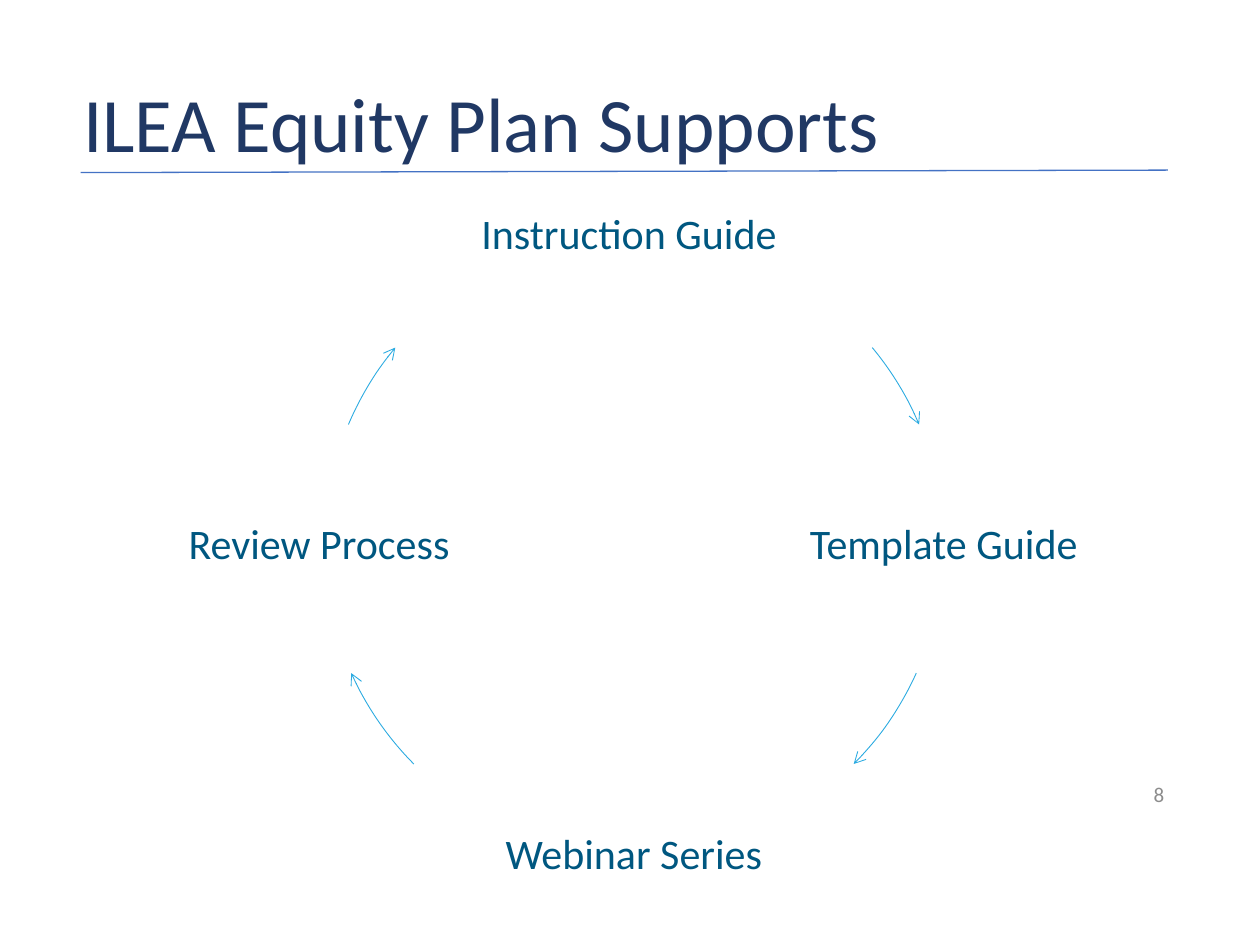
from dataclasses import dataclass
from math import cos, radians, sin

from lxml.etree import SubElement
from pptx import Presentation
from pptx.dml.color import RGBColor
from pptx.enum.shapes import MSO_CONNECTOR, MSO_SHAPE
from pptx.enum.text import MSO_ANCHOR, MSO_AUTO_SIZE, PP_ALIGN
from pptx.oxml.ns import qn
from pptx.util import Inches, Pt


@dataclass(frozen=True)
class Theme:
    font: str = "Calibri"
    title_color: str = "203864"
    rule_color: str = "4472C4"
    step_color: str = "005780"
    arrow_color: str = "2CABE1"
    number_color: str = "8C8C8C"
    title_size: int = 44
    step_size: int = 24
    number_size: int = 12
    rule_width: float = 0.75
    arrow_width: float = 0.5


def write_text(shape, text, *, font, size, color, align=PP_ALIGN.LEFT,
               line_spacing=1.0, inset_x=0.07, inset_y=0.04):
    frame = shape.text_frame
    frame.word_wrap = True
    frame.auto_size = MSO_AUTO_SIZE.NONE
    frame.vertical_anchor = MSO_ANCHOR.MIDDLE
    frame.margin_left = frame.margin_right = Inches(inset_x)
    frame.margin_top = frame.margin_bottom = Inches(inset_y)
    frame.text = text
    paragraph = frame.paragraphs[0]
    paragraph.alignment = align
    paragraph.line_spacing = line_spacing
    run_font = paragraph.runs[0].font
    run_font.name = font
    run_font.size = Pt(size)
    run_font.color.rgb = RGBColor.from_string(color)


class SlideBuilder:
    def __init__(self, slide, theme):
        self.slide = slide
        self.theme = theme

    def title(self, text, left, top, width, height):
        shape = self.slide.shapes.title
        shape.left, shape.top = Inches(left), Inches(top)
        shape.width, shape.height = Inches(width), Inches(height)
        write_text(shape, text, font=self.theme.font, size=self.theme.title_size,
                   color=self.theme.title_color, line_spacing=0.9)

    def rule(self, x1, y1, x2, y2):
        connector = self.slide.shapes.add_connector(
            MSO_CONNECTOR.STRAIGHT, Inches(x1), Inches(y1), Inches(x2), Inches(y2))
        connector.line.color.rgb = RGBColor.from_string(self.theme.rule_color)
        connector.line.width = Pt(self.theme.rule_width)
        SubElement(connector.element.spPr, qn("a:effectLst"))

    def text_box(self, text, left, top, width, height, **text_format):
        shape = self.slide.shapes.add_textbox(
            Inches(left), Inches(top), Inches(width), Inches(height))
        write_text(shape, text, font=self.theme.font, **text_format)

    def step(self, text, center_x, center_y, width, height=1.34):
        self.text_box(text, center_x - width / 2, center_y - height / 2, width, height,
                      size=self.theme.step_size, color=self.theme.step_color,
                      align=PP_ALIGN.CENTER, line_spacing=0.9, inset_x=0.1, inset_y=0.1)

    def arc_arrow(self, center_x, center_y, radius, start, end):
        shape = self.slide.shapes.add_shape(
            MSO_SHAPE.ARC, Inches(center_x - radius), Inches(center_y - radius),
            Inches(2 * radius), Inches(2 * radius))
        units_per_degree = 0.6
        shape.adjustments[0] = start * units_per_degree
        shape.adjustments[1] = end * units_per_degree
        shape.shadow.inherit = False
        shape.fill.background()
        shape.line.color.rgb = RGBColor.from_string(self.theme.arrow_color)
        shape.line.width = Pt(self.theme.arrow_width)
        outline = shape.element.spPr.find(qn("a:ln"))
        SubElement(outline, qn("a:tailEnd"), type="arrow")

    def cycle(self, steps, center_x, center_y, radius):
        for index, (text, width, start, end) in enumerate(steps):
            angle = radians(index * 360 / len(steps) - 90)
            self.step(text, center_x + radius * cos(angle),
                      center_y + radius * sin(angle), width)
            self.arc_arrow(center_x, center_y, radius, start, end)


def main():
    presentation = Presentation()
    presentation.slide_width = Inches(10)
    presentation.slide_height = Inches(7.5)
    theme = Theme()
    slide = presentation.slides.add_slide(presentation.slide_layouts[5])
    builder = SlideBuilder(slide, theme)

    builder.title("ILEA Equity Plan Supports", 0.59, 0.47, 8.62, 1.09)
    builder.rule(0.64, 1.37, 9.27, 1.35)
    builder.text_box("8", 7.06, 6.15, 2.25, 0.3, size=theme.number_size,
                     color=theme.number_color, align=PP_ALIGN.RIGHT)
    steps = [
        ("Instruction Guide ", 3.32, 320.3, 337),
        ("Template Guide", 2.83, 24.3, 44.8),
        ("Webinar Series", 2.92, 135.2, 155.7),
        ("Review Process ", 2.95, 203, 219.7),
    ]
    builder.cycle(steps, center_x=5.03, center_y=4.33, radius=2.46)

    presentation.save("out.pptx")


if __name__ == "__main__":
    main()
